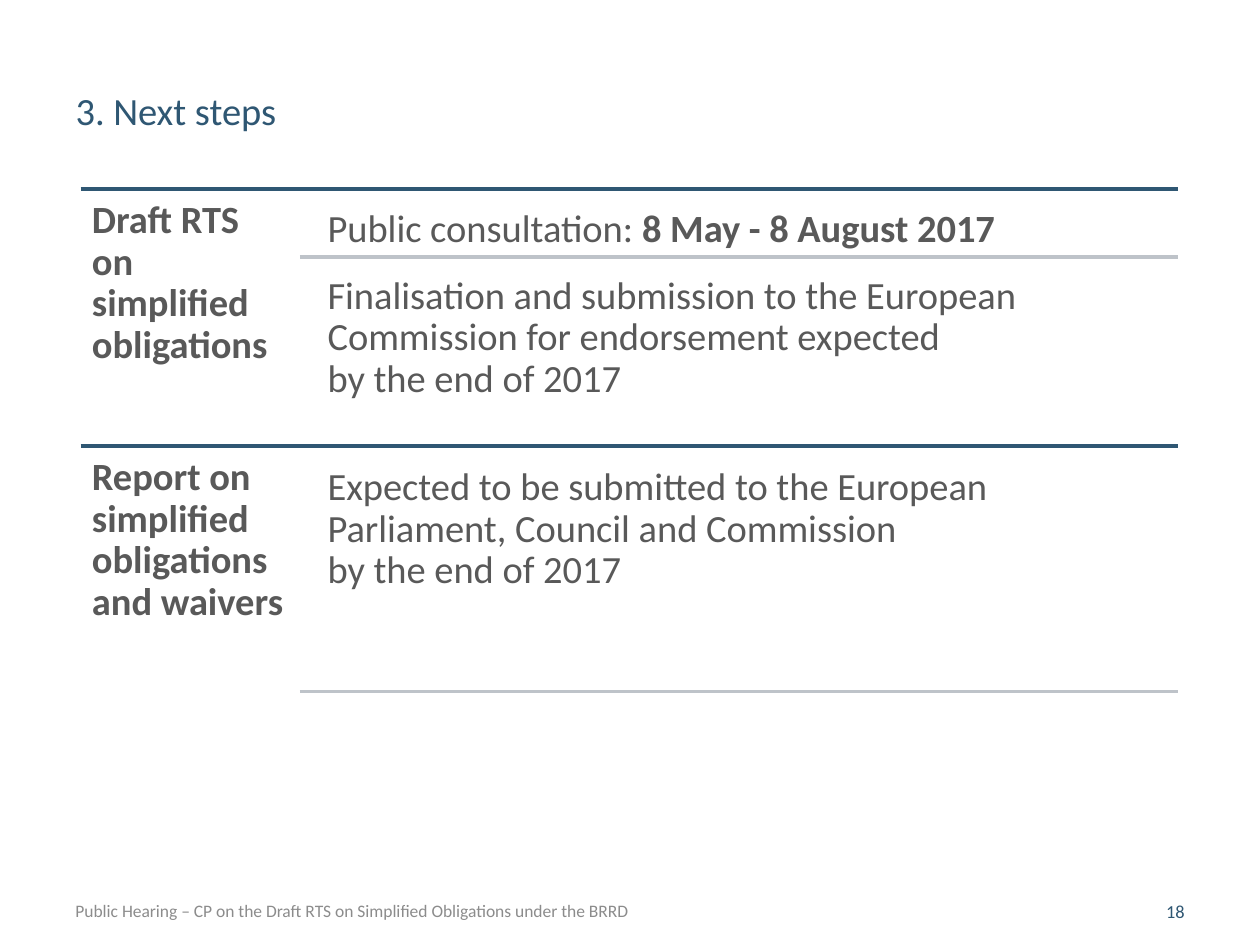
from lxml.etree import SubElement
from pptx import Presentation
from pptx.dml.color import RGBColor
from pptx.enum.shapes import MSO_CONNECTOR
from pptx.enum.text import MSO_ANCHOR, PP_ALIGN
from pptx.oxml.ns import qn
from pptx.util import Inches, Pt

NAVY = RGBColor(0x2F, 0x57, 0x73)
SILVER = RGBColor(0xBE, 0xC3, 0xC9)
DARK = RGBColor(0x59, 0x59, 0x59)
GREY = RGBColor(0x8C, 0x8C, 0x8C)

# Grid: edges of the label column, the text column and the two rows
LEFT, SPLIT, RIGHT = 0.64, 2.38, 9.35
TOP, ROW = 1.5, 2.04
INDENT = 0.13
PAD = 0.09

HEAD = {"name": "Calibri", "size": Pt(22), "bold": False, "color": NAVY}
BODY = {**HEAD, "color": DARK}
BOLD = {**BODY, "bold": True}
NOTE = {**HEAD, "size": Pt(10), "color": GREY}
PAGE = {**HEAD, "size": Pt(10.5)}

# Per row: label, then (offset, height, lines of runs, rule below)
STEPS = [
    ("Draft RTS on simplified obligations", [
        (0.07, 0.47, [[("Public consultation: ", BODY),
                       ("8 May - 8 August 2017", BOLD)]], True),
        (0.6, 1.36, [[("Finalisation and submission to the European "
                       "Commission for endorsement expected ", BODY)],
                     [("by the end of 2017", BODY)]], False),
    ]),
    ("Report on simplified obligations and waivers", [
        (0.08, 1.87, [[("Expected to be submitted to the European "
                        "Parliament, Council and Commission ", BODY)],
                      [("by the end of 2017", BODY)]], True),
    ]),
]


def style(font, form):
    for key, val in form.items():
        if key == "color":
            font.color.rgb = val
        else:
            setattr(font, key, val)


def place(shape, x, y, w, h):
    for key, val in zip(("left", "top", "width", "height"), (x, y, w, h)):
        setattr(shape, key, Inches(val))


def fill(para, lines):
    for i, runs in enumerate(lines):
        if i:
            para.add_line_break()
        for text, form in runs:
            run = para.add_run()
            run.text = text
            style(run.font, form)


def add_text(slide, spot, lines):
    box = slide.shapes.add_textbox(*map(Inches, spot))
    box.text_frame.word_wrap = True
    fill(box.text_frame.paragraphs[0], lines)
    return box.text_frame


def add_cell(slide, spot, lines):
    frame = add_text(slide, spot, lines)
    for side in ("left", "top", "right", "bottom"):
        setattr(frame, f"margin_{side}", Inches(PAD))
    frame.paragraphs[0].line_spacing = 0.9


def add_rule(slide, x, y, color):
    rule = slide.shapes.add_connector(
        MSO_CONNECTOR.STRAIGHT, *map(Inches, (x, y, RIGHT, y)))
    rule.line.color.rgb = color
    rule.line.width = Pt(2)
    SubElement(rule._element.spPr, qn("a:effectLst"))


def add_title(slide, text):
    title = slide.shapes.title
    place(title, 0.5, 0.64, 7.29, 0.61)
    title.text_frame.vertical_anchor = MSO_ANCHOR.TOP
    para = title.text_frame.paragraphs[0]
    para.alignment = PP_ALIGN.LEFT
    fill(para, [[(text, HEAD)]])


def add_step(slide, y, label, items):
    add_rule(slide, LEFT, y, NAVY)
    add_cell(slide, (LEFT, y, SPLIT - LEFT, ROW), [[(label, BOLD)]])
    x = SPLIT + INDENT
    for off, high, lines, ruled in items:
        add_cell(slide, (x, y + off, RIGHT - x, high), lines)
        if ruled:
            add_rule(slide, SPLIT, y + off + high, SILVER)


def add_foot(slide, x, w, text, form, align):
    frame = add_text(slide, (x, 7.11, w, 0.24), [[(text, form)]])
    frame.vertical_anchor = MSO_ANCHOR.MIDDLE
    frame.paragraphs[0].alignment = align


def main():
    deck = Presentation()
    deck.slide_width, deck.slide_height = Inches(10), Inches(7.5)
    slide = deck.slides.add_slide(deck.slide_layouts[5])

    add_title(slide, "3. Next steps")

    # Steps, one row each
    for i, (label, items) in enumerate(STEPS):
        add_step(slide, TOP + i * ROW, label, items)

    # Footer and page number
    add_foot(slide, 0.5, 5.38, "Public Hearing – CP on the Draft RTS on "
             "Simplified Obligations under the BRRD", NOTE, PP_ALIGN.LEFT)
    add_foot(slide, 8.65, 0.85, "18", PAGE, PP_ALIGN.RIGHT)

    deck.save("out.pptx")


if __name__ == "__main__":
    main()
